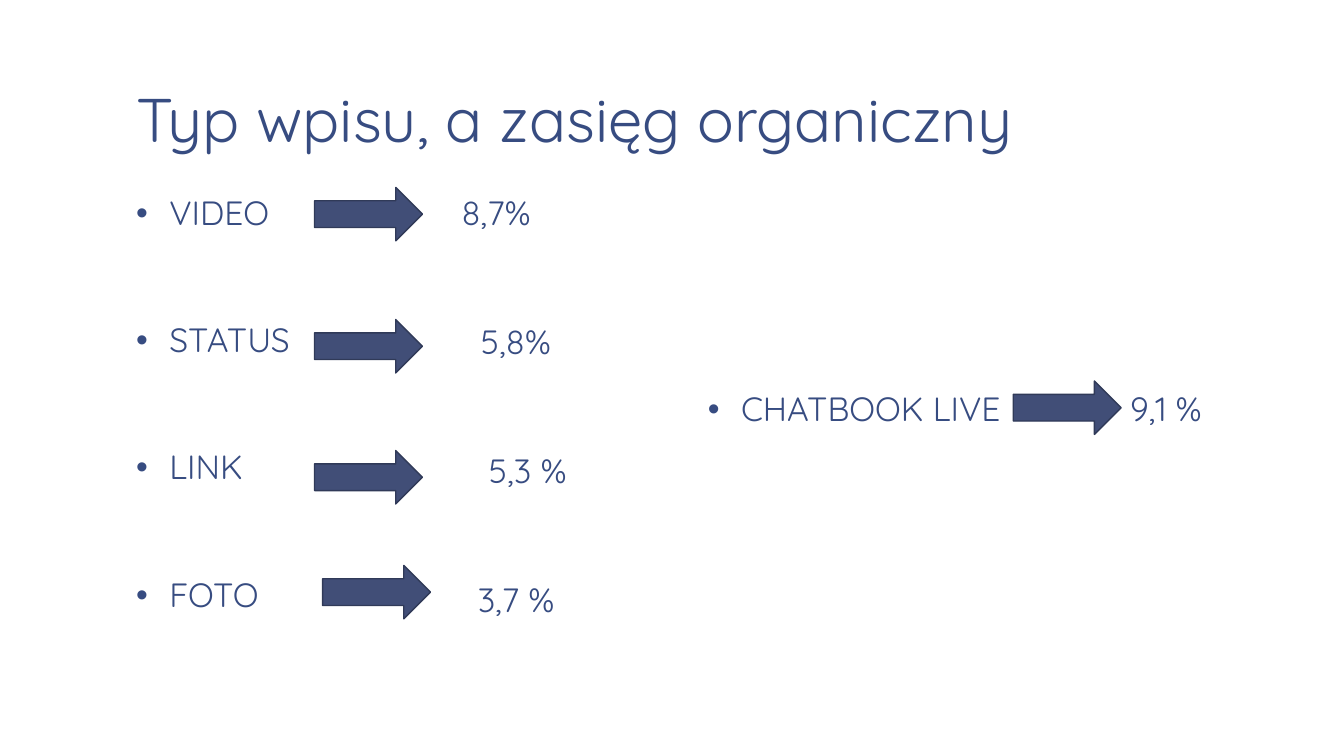
from dataclasses import dataclass
from lxml.etree import SubElement
from pptx import Presentation
from pptx.dml.color import RGBColor
from pptx.enum.shapes import MSO_SHAPE
from pptx.enum.text import MSO_ANCHOR, MSO_AUTO_SIZE, PP_ALIGN
from pptx.oxml.ns import qn
from pptx.util import Inches, Pt


@dataclass(frozen=True)
class Theme:
    font: str = "Quicksand"
    text: RGBColor = RGBColor(0x37, 0x4C, 0x81)
    arrow: RGBColor = RGBColor(0x41, 0x4E, 0x77)
    outline: RGBColor = RGBColor(0x30, 0x3A, 0x58)
    title_size: Pt = Pt(44)
    body_size: Pt = Pt(24)


theme = Theme()


def format_paragraph(paragraph, size, line_spacing):
    paragraph.alignment = PP_ALIGN.LEFT
    paragraph.line_spacing = line_spacing
    paragraph.font.name = theme.font
    paragraph.font.size = size
    paragraph.font.color.rgb = theme.text


def add_text(slide, left, top, width, height, lines, side_margin, bulleted=False):
    box = slide.shapes.add_textbox(Inches(left), Inches(top), Inches(width), Inches(height))
    frame = box.text_frame
    frame.word_wrap = True
    frame.margin_left = frame.margin_right = Inches(side_margin)
    frame.margin_top = frame.margin_bottom = Inches(0.07)
    frame.text = "\n".join(lines)
    for index, paragraph in enumerate(frame.paragraphs):
        if bulleted:
            properties = paragraph._p.get_or_add_pPr()
            properties.set("marL", str(Inches(0.33)))
            properties.set("indent", str(-Inches(0.33)))
            SubElement(properties, qn("a:buFont"), typeface="Arial")
            SubElement(properties, qn("a:buChar"), char="•")
        format_paragraph(paragraph, theme.body_size, 0.95)
        if index:
            paragraph.space_before = Pt(63.6)


presentation = Presentation()
presentation.slide_width = Inches(13.33)
presentation.slide_height = Inches(7.5)
slide = presentation.slides.add_slide(presentation.slide_layouts[5])

title = slide.shapes.title
title.left, title.top = Inches(1.22), Inches(0.08)
title.width, title.height = Inches(11.11), Inches(1.53)
title_frame = title.text_frame
title_frame.text = "Typ wpisu, a zasięg organiczny"
title_frame.word_wrap = True
title_frame.auto_size = MSO_AUTO_SIZE.NONE
title_frame.vertical_anchor = MSO_ANCHOR.BOTTOM
title_frame.margin_left = title_frame.margin_right = Inches(0.13)
title_frame.margin_top = title_frame.margin_bottom = Inches(0.07)
format_paragraph(title_frame.paragraphs[0], theme.title_size, 0.85)

list_top, row_pitch, live_top = 1.86, 1.28, 3.81
add_text(slide, 1.22, list_top, 1.95, 4.89, ["VIDEO", "STATUS", "LINK", "FOTO"], 0.13, True)
add_text(slide, 6.89, live_top, 3.25, 0.55, ["CHATBOOK LIVE"], 0.13, True)

reaches = [
    ("8,7%", 4.58, list_top, 3.12, 1.86),
    ("5,8%", 4.77, list_top + row_pitch, 3.12, 3.17),
    ("5,3 %", 4.85, list_top + 2 * row_pitch, 3.12, 4.47),
    ("3,7 %", 4.74, list_top + 3 * row_pitch, 3.2, 5.61),
    ("9,1 %", 11.21, live_top, 10.05, 3.78),
]
for value, value_left, value_top, arrow_left, arrow_top in reaches:
    add_text(slide, value_left, value_top, 1.1, 0.55, [value], 0)
    arrow = slide.shapes.add_shape(
        MSO_SHAPE.RIGHT_ARROW, Inches(arrow_left), Inches(arrow_top), Inches(1.07), Inches(0.53)
    )
    arrow.shadow.inherit = False
    arrow.fill.solid()
    arrow.fill.fore_color.rgb = theme.arrow
    arrow.line.color.rgb = theme.outline
    arrow.line.width = Pt(1)

presentation.save("out.pptx")
